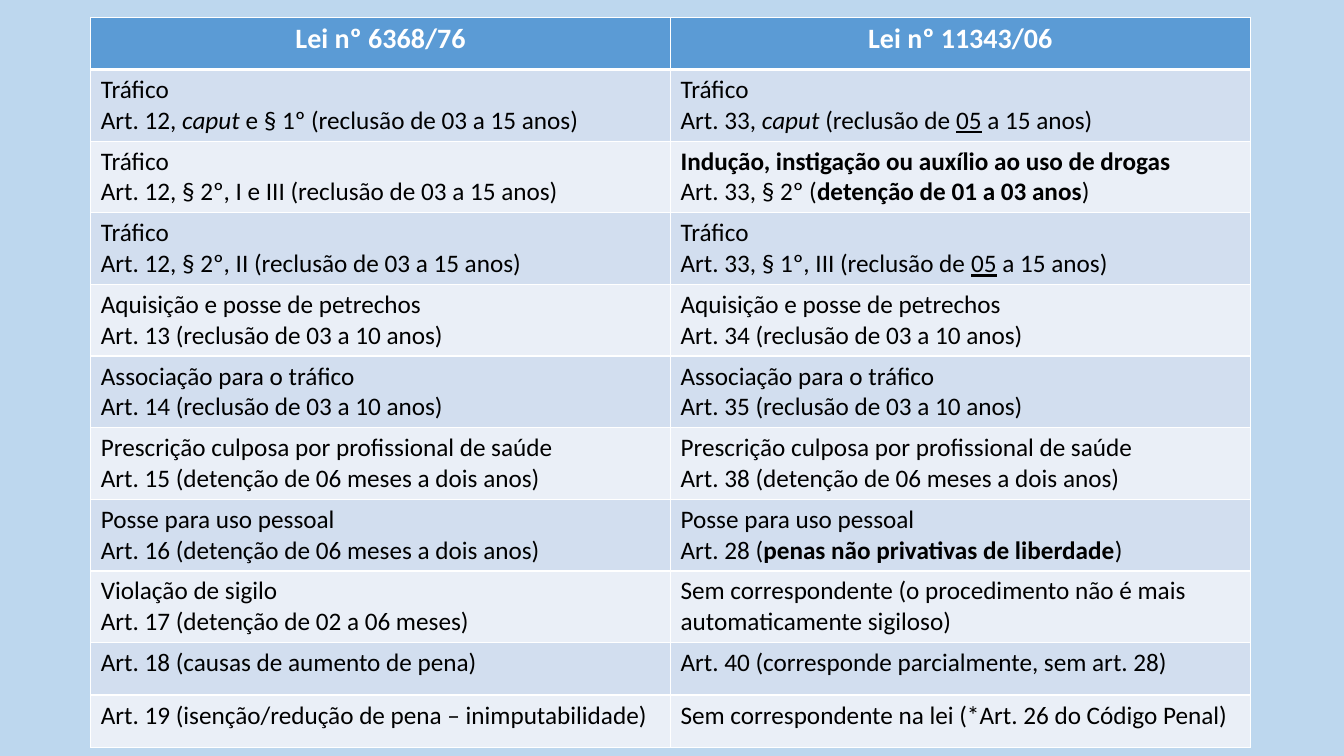
from lxml.etree import SubElement
from pptx import Presentation
from pptx.dml.color import RGBColor
from pptx.enum.text import PP_ALIGN
from pptx.oxml.ns import qn
from pptx.util import Inches, Pt

COLORS = {
    "background": "BDD7EE",
    "header": "5B9BD5",
    "odd": "D2DEEF",
    "even": "EAEFF7",
    "border": "FFFFFF",
    "header_text": "FFFFFF",
    "text": "000000",
}
FONT = "Calibri"

HEADERS = ("Lei nº 6368/76", "Lei nº 11343/06")

# Each cell is a list of lines; a line is plain text or a list of
# (text, style) pieces, where the style is "", "bold", "italic" or "underline".
LAW_ROWS = [
    (["Tráfico",
      [("Art. 12, ", ""), ("caput ", "italic"), ("e § 1º (reclusão de 03 a 15 anos)", "")]],
     ["Tráfico",
      [("Art. 33, ", ""), ("caput", "italic"), (" (reclusão de ", ""),
       ("05", "underline"), (" a 15 anos)", "")]]),
    (["Tráfico", "Art. 12, § 2º, I e III (reclusão de 03 a 15 anos)"],
     [[("Indução, instigação ou auxílio ao uso de drogas", "bold")],
      [("Art. 33, § 2º (", ""), ("detenção de 01 a 03 anos", "bold"), (")", "")]]),
    (["Tráfico", "Art. 12, § 2º, II (reclusão de 03 a 15 anos)"],
     ["Tráfico",
      [("Art. 33, § 1º, III (reclusão de ", ""), ("05", "underline"), (" a 15 anos)", "")]]),
    (["Aquisição e posse de petrechos", "Art. 13 (reclusão de 03 a 10 anos)"],
     ["Aquisição e posse de petrechos", "Art. 34 (reclusão de 03 a 10 anos)"]),
    (["Associação para o tráfico", "Art. 14 (reclusão de 03 a 10 anos)"],
     ["Associação para o tráfico", "Art. 35 (reclusão de 03 a 10 anos)"]),
    (["Prescrição culposa por profissional de saúde",
      "Art. 15 (detenção de 06 meses a dois anos)"],
     ["Prescrição culposa por profissional de saúde",
      "Art. 38 (detenção de 06 meses a dois anos)"]),
    (["Posse para uso pessoal", "Art. 16 (detenção de 06 meses a dois anos)"],
     ["Posse para uso pessoal",
      [("Art. 28 (", ""), ("penas não privativas de liberdade", "bold"), (")", "")]]),
    (["Violação de sigilo", "Art. 17 (detenção de 02 a 06 meses)"],
     ["Sem correspondente (o procedimento não é mais automaticamente sigiloso)"]),
    (["Art. 18 (causas de aumento de pena)"],
     ["Art. 40 (corresponde parcialmente, sem art. 28)"]),
    (["Art. 19 (isenção/redução de pena – inimputabilidade)"],
     ["Sem correspondente na lei (*Art. 26 do Código Penal)"]),
]

SLIDE_WIDTH, SLIDE_HEIGHT = 13.33, 7.5
TABLE_LEFT, TABLE_TOP = 0.9, 0.17
COLUMN_WIDTH, ROW_HEIGHT = 5.75, 0.52


def rgb(name):
    return RGBColor.from_string(COLORS[name])


def set_borders(cell, bottom_width):
    properties = cell._tc.get_or_add_tcPr()
    widths = {"a:lnL": 1, "a:lnR": 1, "a:lnT": 1, "a:lnB": bottom_width}
    for side, width in widths.items():
        line = SubElement(properties, qn(side), w=str(Pt(width)))
        fill = SubElement(line, qn("a:solidFill"))
        SubElement(fill, qn("a:srgbClr"), val=COLORS["border"])


def fill_cell(cell, lines, background, text_color, size, header=False):
    set_borders(cell, bottom_width=3 if header else 1)
    cell.fill.solid()
    cell.fill.fore_color.rgb = rgb(background)
    for index, line in enumerate(lines):
        frame = cell.text_frame
        paragraph = frame.add_paragraph() if index else frame.paragraphs[0]
        paragraph.alignment = PP_ALIGN.CENTER if header else PP_ALIGN.LEFT
        pieces = [(line, "")] if isinstance(line, str) else line
        for text, style in pieces:
            run = paragraph.add_run()
            run.text = text
            font = run.font
            font.name = FONT
            font.size = Pt(size)
            font.color.rgb = rgb(text_color)
            font.bold = header or style == "bold"
            if style == "italic":
                font.italic = True
            if style == "underline":
                font.underline = True


def main():
    presentation = Presentation()
    presentation.slide_width = Inches(SLIDE_WIDTH)
    presentation.slide_height = Inches(SLIDE_HEIGHT)
    slide = presentation.slides.add_slide(presentation.slide_layouts[6])
    slide.background.fill.solid()
    slide.background.fill.fore_color.rgb = rgb("background")

    row_count, column_count = len(LAW_ROWS) + 1, len(HEADERS)
    table = slide.shapes.add_table(
        row_count, column_count, Inches(TABLE_LEFT), Inches(TABLE_TOP),
        Inches(COLUMN_WIDTH * column_count), Inches(ROW_HEIGHT * row_count)).table

    for column, title in enumerate(HEADERS):
        fill_cell(table.cell(0, column), [title], "header", "header_text", 20, header=True)
    for row, law_row in enumerate(LAW_ROWS, start=1):
        band = "odd" if row % 2 else "even"
        for column, lines in enumerate(law_row):
            fill_cell(table.cell(row, column), lines, band, "text", 18)

    presentation.save("out.pptx")


if __name__ == "__main__":
    main()
